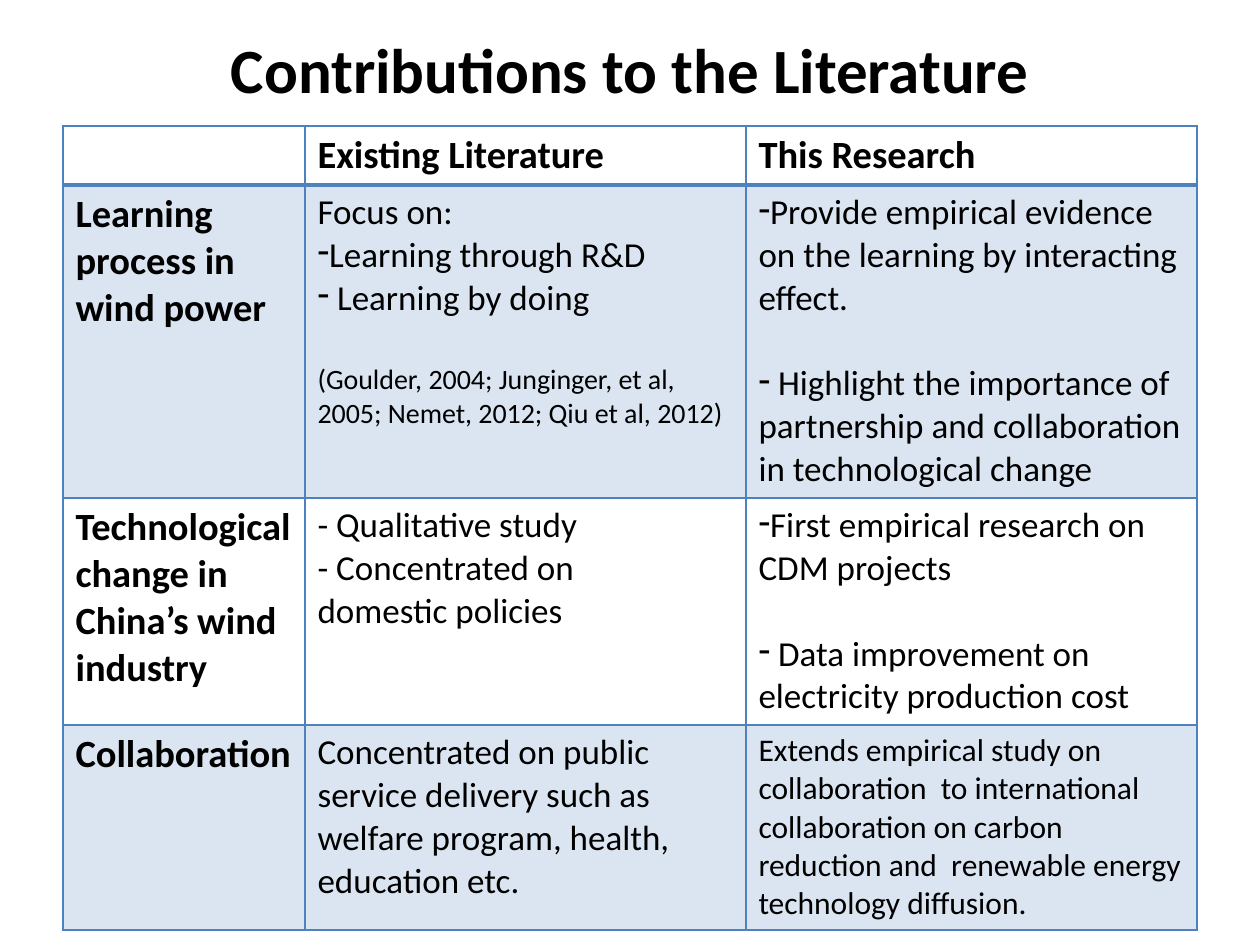
from lxml import etree
from pptx import Presentation
from pptx import util as u
from pptx.dml.color import RGBColor
from pptx.enum import text
from pptx.oxml.ns import qn

EMU_PER_PX = 914400 // 126
COLORS = {"ink": "000000", "accent": "4F81BD"}
FORMATS = {
    "title": {"size": u.Pt(36), "bold": True},
    "heading": {"size": u.Pt(22), "bold": True},
    "body": {"size": u.Pt(20), "bold": False},
    "compact": {"size": u.Pt(18), "bold": False},
    "citation": {"size": u.Pt(16), "bold": False},
}
GAP = u.Pt(24.4)  # one line of body text
BAND_ALPHA = 20


def px(length):
    return u.Emu(length * EMU_PER_PX)


def para(words, style="body", bullet=False, gap=False):
    return {"words": words, "style": style, "bullet": bullet, "gap": gap}


class SlideBuilder:
    def __init__(self, slide, font="Calibri"):
        self.slide = slide
        self.font = font

    def fill_paragraph(self, paragraph, content):
        run = paragraph.add_run()
        run.text = content["words"]
        run.font.name = self.font
        run.font.color.rgb = RGBColor.from_string(COLORS["ink"])
        for attribute, value in FORMATS[content["style"]].items():
            setattr(run.font, attribute, value)
        if content["gap"]:
            paragraph.space_before = GAP
        if content["bullet"]:
            properties = paragraph._p.get_or_add_pPr()
            properties.set("marL", "0")
            properties.set("indent", "0")
            etree.SubElement(properties, qn("a:buChar"), char="-")

    def title(self, left, top, width, height, words):
        frame = self.slide.shapes.add_textbox(
            px(left), px(top), px(width), px(height)).text_frame
        frame.word_wrap = True
        frame.vertical_anchor = text.MSO_ANCHOR.MIDDLE
        frame.paragraphs[0].alignment = text.PP_ALIGN.CENTER
        self.fill_paragraph(frame.paragraphs[0], para(words, "title"))

    def border(self, cell, side, points):
        line = etree.SubElement(cell._tc.get_or_add_tcPr(), qn("a:ln" + side),
                                w=str(u.Pt(points)))
        fill = etree.SubElement(line, qn("a:solidFill"))
        etree.SubElement(fill, qn("a:srgbClr"), val=COLORS["accent"])

    def band(self, cell):
        cell.fill.solid()
        cell.fill.fore_color.rgb = RGBColor.from_string(COLORS["accent"])
        color = cell._tc.tcPr.find(qn("a:solidFill"))[0]
        etree.SubElement(color, qn("a:alpha"), val=str(BAND_ALPHA * 1000))

    def table(self, left, top, widths, heights, rows):
        table = self.slide.shapes.add_table(
            len(rows), len(widths), px(left), px(top),
            px(sum(widths)), px(sum(heights))).table
        table.first_row = table.horz_banding = False
        for column, width in zip(table.columns, widths):
            column.width = px(width)
        for index, (row, height) in enumerate(zip(rows, heights)):
            table.rows[index].height = px(height)
            # The rule under the header is twice as heavy
            sides = {"L": 1, "R": 1, "T": 2 if index == 1 else 1,
                     "B": 2 if index == 0 else 1}
            for cell, contents in zip(table.rows[index].cells, row):
                for side, points in sides.items():
                    self.border(cell, side, points)
                if index % 2:
                    self.band(cell)
                else:
                    cell.fill.background()
                frame = cell.text_frame
                for number, content in enumerate(contents):
                    paragraph = frame.add_paragraph() if number else frame.paragraphs[0]
                    self.fill_paragraph(paragraph, content)


# Literature comparison: topic, existing work, this research
COMPARISON = [
    [[], [para("Existing Literature", "heading")], [para("This Research", "heading")]],
    [
        [para("Learning process in wind power", "heading")],
        [para("Focus on:"),
         para("Learning through R&D", bullet=True),
         para(" Learning by doing", bullet=True),
         para("(Goulder, 2004; Junginger, et al,  2005; Nemet, 2012; Qiu et al, 2012)",
              "citation", gap=True)],
        [para("Provide empirical evidence on the learning by interacting effect.",
              bullet=True),
         para(" Highlight the importance of partnership and collaboration in "
              "technological change", bullet=True, gap=True)],
    ],
    [
        [para("Technological change in China’s wind industry", "heading")],
        [para("- Qualitative study"), para("- Concentrated on"),
         para("domestic policies")],
        [para("First empirical research on  CDM projects", bullet=True),
         para(" Data improvement on electricity production cost",
              bullet=True, gap=True)],
    ],
    [
        [para("Collaboration", "heading")],
        [para("Concentrated on public service delivery such as welfare program, "
              "health, education etc.")],
        [para("Extends empirical study on collaboration  to international "
              "collaboration on carbon reduction and  renewable energy technology "
              "diffusion.", "compact")],
    ],
]


def main():
    deck = Presentation()
    deck.slide_width, deck.slide_height = px(1260), px(945)
    builder = SlideBuilder(deck.slides.add_slide(deck.slide_layouts[6]))

    # Title
    builder.title(63, 10, 1134, 116, "Contributions to the Literature")

    # Comparison table
    builder.table(63, 126, [242, 441, 451], [59, 313, 227, 205], COMPARISON)

    deck.save("out.pptx")


if __name__ == "__main__":
    main()
